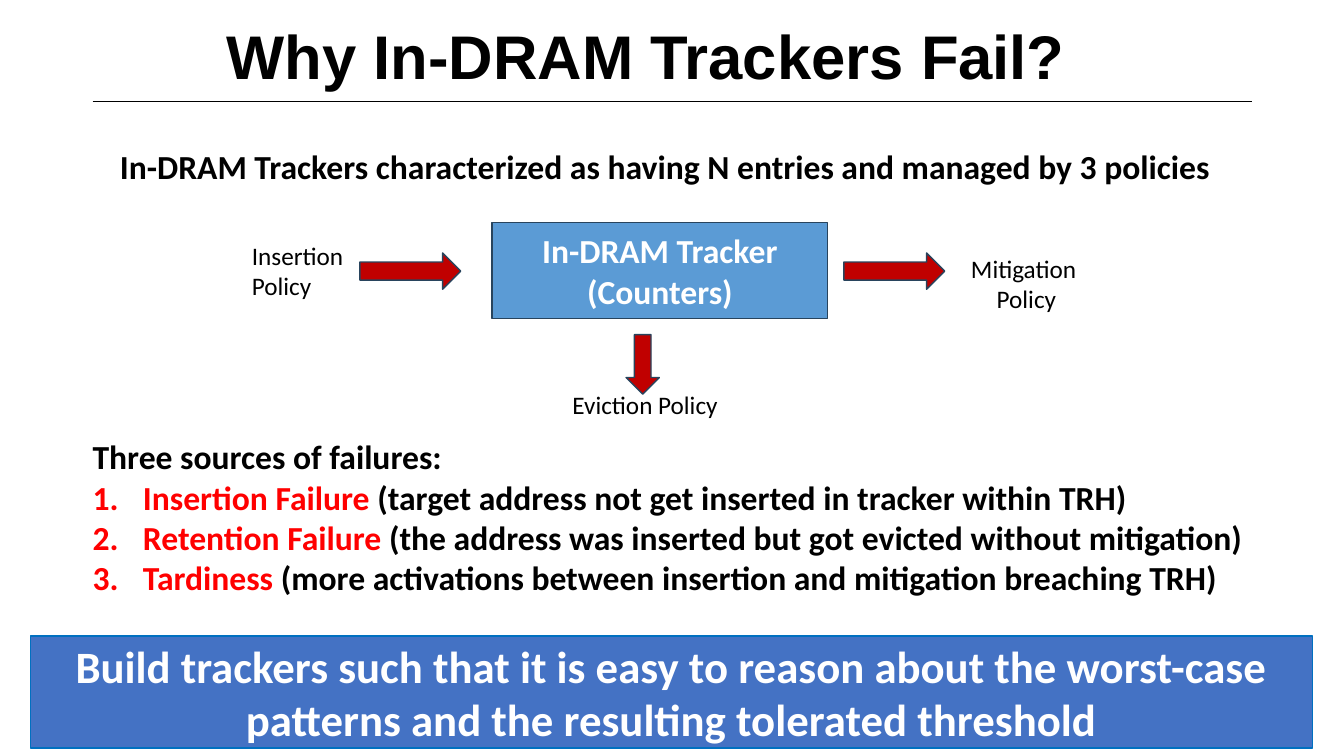
from lxml import etree
from pptx import Presentation
from pptx.dml.color import RGBColor
from pptx.enum.shapes import MSO_CONNECTOR, MSO_SHAPE
from pptx.enum.text import MSO_ANCHOR, PP_ALIGN
from pptx.oxml.ns import qn
from pptx.util import Inches, Pt

COLORS = {
    "black": "000000", "white": "FFFFFF", "red": "FF0000", "arrow": "C00000",
    "tracker": "5B9BD5", "outline": "28445D", "banner": "4472C4", "banner_line": "0070C0",
}

TITLE = "Why In-DRAM Trackers Fail?"
INTRO = "In-DRAM Trackers characterized as having N entries and managed by 3 policies"
TRACKER = ["In-DRAM Tracker", "(Counters)"]
BANNER = ("Build trackers such that it is easy to reason about the worst-case "
          "patterns and the resulting tolerated threshold")
POLICIES = [
    (["Insertion", "Policy"], (2.4, 2.33, 1.18, 0.71), PP_ALIGN.LEFT),
    (["Eviction Policy"], (5.58, 3.81, 1.66, 0.4), PP_ALIGN.LEFT),
    (["Mitigation ", "Policy"], (9.52, 2.46, 1.32, 0.71), PP_ALIGN.CENTER),
]
ARROWS = [
    (MSO_SHAPE.RIGHT_ARROW, (3.57, 2.51, 1, 0.36)),
    (MSO_SHAPE.DOWN_ARROW, (6.21, 3.32, 0.33, 0.59)),
    (MSO_SHAPE.RIGHT_ARROW, (8.37, 2.51, 1, 0.36)),
]
FAILURE_HEAD = "Three sources of failures:"
FAILURES = [
    ("Insertion Failure ", "(target address not get inserted in tracker within TRH)"),
    ("Retention Failure", " (the address was inserted but got evicted without mitigation)"),
    ("Tardiness", " (more activations between insertion and mitigation breaching TRH)"),
]


def rgb(name):
    return RGBColor.from_string(COLORS[name])


def write(tf, paragraphs, size, bold=True, align=PP_ALIGN.LEFT, font="Calibri"):
    for i, runs in enumerate(paragraphs):
        p = tf.paragraphs[0] if i == 0 else tf.add_paragraph()
        p.alignment = align
        for text, color in runs:
            r = p.add_run()
            r.text = text
            r.font.name = font
            r.font.size = Pt(size)
            r.font.bold = bold
            r.font.color.rgb = rgb(color)


def plain(lines, color="black"):
    return [[(line, color)] for line in lines]


def add_text(s, box, paragraphs, size, wrap=False, **style):
    tf = s.shapes.add_textbox(*map(Inches, box)).text_frame
    tf.word_wrap = wrap
    write(tf, paragraphs, size, **style)
    return tf


def add_block(s, kind, box, fill, line):
    sp = s.shapes.add_shape(kind, *map(Inches, box))
    sp.shadow.inherit = False
    sp.fill.solid()
    sp.fill.fore_color.rgb = rgb(fill)
    sp.line.color.rgb = rgb(line)
    sp.line.width = Pt(1)
    sp.text_frame.vertical_anchor = MSO_ANCHOR.MIDDLE
    return sp.text_frame


def number(p):
    pPr = p._p.get_or_add_pPr()
    pPr.set("marL", str(Inches(0.5)))
    pPr.set("indent", str(-Inches(0.5)))
    etree.SubElement(pPr, qn("a:buFont"), typeface="+mj-lt")
    etree.SubElement(pPr, qn("a:buAutoNum"), type="arabicPeriod")


def main():
    prs = Presentation()
    prs.slide_width, prs.slide_height = Inches(13.33), Inches(7.5)
    s = prs.slides.add_slide(prs.slide_layouts[6])

    rule = s.shapes.add_connector(
        MSO_CONNECTOR.STRAIGHT, Inches(0.92), Inches(1.01), Inches(12.42), Inches(1.01))
    rule.line.color.rgb = rgb("black")
    rule.line.width = Pt(0.5)
    etree.SubElement(rule._element.spPr, qn("a:effectLst"))

    tf = add_text(s, (0.66, 0.2, 11.5, 0.78), plain([TITLE]), 44, wrap=True,
                  align=PP_ALIGN.CENTER, font="Arial")
    tf.vertical_anchor = MSO_ANCHOR.MIDDLE
    tf.paragraphs[0].line_spacing = 0.9

    tf = add_block(s, MSO_SHAPE.RECTANGLE, (4.88, 2.21, 3.33, 0.95), "tracker", "outline")
    write(tf, plain(TRACKER, "white"), 24, align=PP_ALIGN.CENTER)

    for kind, box in ARROWS:
        add_block(s, kind, box, "arrow", "outline")
    for lines, box, align in POLICIES:
        add_text(s, box, plain(lines), 18, bold=False, align=align)

    add_text(s, (1.09, 1.4, 11.15, 0.5), plain([INTRO]), 24)

    failures = [[(name, "red"), (reason, "black")] for name, reason in FAILURES]
    tf = add_text(s, (0.82, 4.28, 11.73, 1.72), plain([FAILURE_HEAD]) + failures, 24)
    for p in tf.paragraphs[1:]:
        number(p)

    tf = add_block(s, MSO_SHAPE.RECTANGLE, (0.3, 6.31, 12.72, 1.11), "banner", "banner_line")
    write(tf, plain([BANNER], "white"), 32, align=PP_ALIGN.CENTER)

    prs.save("out.pptx")


if __name__ == "__main__":
    main()
